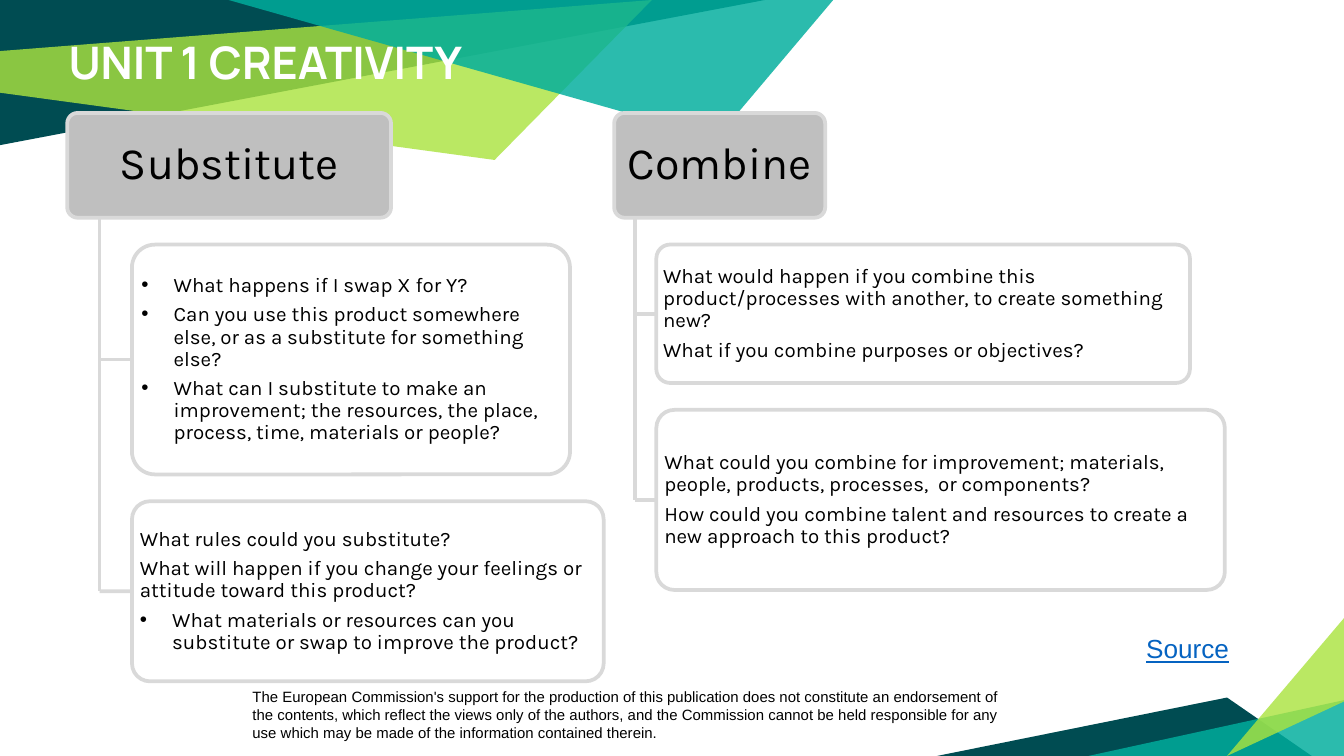
from lxml import etree
from pptx import Presentation
from pptx.dml.color import RGBColor
from pptx.enum.shapes import MSO_CONNECTOR, MSO_SHAPE
from pptx.enum.text import MSO_ANCHOR, MSO_AUTO_SIZE, PP_ALIGN
from pptx.oxml.ns import qn
from pptx.util import Inches, Pt

ROUND = MSO_SHAPE.ROUNDED_RECTANGLE
LINE = MSO_CONNECTOR.STRAIGHT
MIDDLE, TOP = MSO_ANCHOR.MIDDLE, MSO_ANCHOR.TOP
LEFT, CENTER = PP_ALIGN.LEFT, PP_ALIGN.CENTER
FIXED = MSO_AUTO_SIZE.NONE

COLS, ROWS = 100, 56.25
HEAD_TOP, HEAD_H, GAP = 8.4, 7.8, 2
DARK, LIME, TEAL = "004C52", "ABE33F", "00AE9D"
GREY, EDGE, WHITE, BLACK, BLUE = "BFBFBF", "D9D9D9", "FFFFFF", "000000", "0563C1"
MARK = "• "

ART = [
    (DARK, 100, [(0, 0), (0, 10.8), (56.9, 0)]),
    (LIME, 81, [(0, 3.8), (0, 6.9), (36.8, 11.9), (48.5, 0)]),
    (DARK, 100, [(69.7, ROWS), (97.6, ROWS), (91.3, 51.9)]),
    (TEAL, 83, [(COLS, 52.1), (COLS, ROWS), (81, ROWS)]),
    (LIME, 81, [(COLS, 52.2), (COLS, 46), (91.3, ROWS)]),
    (TEAL, 83, [(17, 0), (53.3, 10.3), (62, 0)]),
]

TREES = [
    ("Substitute", 5, 24.1, [
        (32.6, 17.1, [
            "• What happens if I swap X for Y?",
            "• Can you use this product somewhere else, or as a substitute for something else?",
            "• What can I substitute to make an improvement; the resources, the place, "
            "process, time, materials or people?",
        ]),
        (35.1, 13.4, [
            "What rules could you substitute?",
            "What will happen if you change your feelings or attitude toward this product?",
            "• What materials or resources can you substitute or swap to improve the product?",
        ]),
    ]),
    ("Combine", 45.7, 15.7, [
        (39.7, 10.3, [
            "What would happen if you combine this product/processes with another, "
            "to create something new?",
            "What if you combine purposes or objectives?",
        ]),
        (42.3, 13.4, [
            "What could you combine for improvement; materials, people, products, "
            "processes,  or components?",
            "How could you combine talent and resources to create a new approach to this product?",
        ]),
    ]),
]

NOTICE = (
    "The European Commission's support for the production of this publication does not "
    "constitute an endorsement of the contents, which reflect the views only of the authors, "
    "and the Commission cannot be held responsible for any use which may be made of the "
    "information contained therein."
)


def grid(*cells):
    return [Inches(cell / 10) for cell in cells]


def rgb(code):
    return RGBColor.from_string(code)


def paint(shape, code, alpha=100):
    shape.shadow.inherit = False
    shape.fill.solid()
    shape.fill.fore_color.rgb = rgb(code)
    if alpha < 100:
        tone = shape.fill._xPr.find(qn("a:solidFill"))[0]
        etree.SubElement(tone, qn("a:alpha"), val=str(alpha * 1000))


def style(para, font, size, code, bold=None, under=None):
    for run in para.runs:
        run.font.name = font
        run.font.size = Pt(size)
        run.font.color.rgb = rgb(code)
        run.font.bold = bold
        run.font.underline = under


def bullet(para):
    props = para._p.get_or_add_pPr()
    props.set("marL", str(Inches(0.24)))
    props.set("indent", str(-Inches(0.24)))
    etree.SubElement(props, qn("a:buFont"), typeface="Arial")
    etree.SubElement(props, qn("a:buChar"), char="•")


def facet(slide, code, alpha, points):
    spots = [grid(*point) for point in points]
    pen = slide.shapes.build_freeform(*spots[0], scale=1.0)
    pen.add_line_segments(spots[1:], close=True)
    shape = pen.convert_to_shape()
    paint(shape, code, alpha)
    shape.line.fill.background()


def card(slide, place, lines, size, code, alpha, align, pad):
    shape = slide.shapes.add_shape(ROUND, *grid(*place))
    shape.adjustments[0] = 0.1
    paint(shape, code, alpha)
    shape.line.color.rgb = rgb(EDGE)
    shape.line.width = Pt(2)
    frame = shape.text_frame
    frame.word_wrap = True
    frame.vertical_anchor = MIDDLE
    frame.margin_left = frame.margin_right = Inches(pad)
    frame.margin_top = frame.margin_bottom = Inches(0.02)
    frame.text = "\n".join(line.removeprefix(MARK) for line in lines)
    for para, line in zip(frame.paragraphs, lines):
        if line.startswith(MARK):
            bullet(para)
        para.alignment = align
        para.line_spacing = 0.9
        para.space_after = Pt(size * 0.35)
        style(para, "Karla", size, BLACK)
    return shape


def link(slide, start, end):
    wire = slide.shapes.add_connector(LINE, *grid(*start, *end))
    wire.line.color.rgb = rgb(EDGE)
    wire.line.width = Pt(2)
    etree.SubElement(wire._element.spPr, qn("a:effectLst"))
    return wire


def tree(slide, name, left, width, boxes):
    card(slide, (left, HEAD_TOP, width, HEAD_H), [name], 24, GREY, 100, CENTER, 0.05)
    trunk, edge = left + width * 0.1, left + width * 0.2
    base = HEAD_TOP + HEAD_H
    top = base + GAP
    for wide, high, lines in boxes:
        mid = top + high / 2
        box = card(slide, (edge, top, wide, high), lines, 11, WHITE, 90, LEFT, 0.02)
        link(slide, (trunk, mid), (edge, mid)).end_connect(box, 1)
        top += high + GAP
    link(slide, (trunk, base), (trunk, mid))


def label(slide, place, text, size, code, under=None):
    frame = slide.shapes.add_textbox(*grid(*place)).text_frame
    frame.word_wrap = True
    frame.vertical_anchor = TOP
    frame.text = text
    style(frame.paragraphs[0], "Arial", size, code, under=under)


def head(slide, text):
    title = slide.shapes.title
    title.element.getparent().append(title.element)
    title.left, title.top, title.width, title.height = grid(4.1, 2.1, 32.9, 5)
    frame = title.text_frame
    frame.text = text
    frame.auto_size = FIXED
    frame.word_wrap = False
    frame.vertical_anchor = MIDDLE
    para = frame.paragraphs[0]
    para.alignment = LEFT
    style(para, "Manrope", 24, WHITE, bold=True)


def main():
    deck = Presentation()
    deck.slide_width, deck.slide_height = grid(COLS, ROWS)
    slide = deck.slides.add_slide(deck.slide_layouts[5])
    label(slide, (17.8, 50.7, 57.9, 5), NOTICE, 8, BLACK)
    for part in ART:
        facet(slide, *part)
    head(slide, "UNIT 1 CREATIVITY")
    for part in TREES:
        tree(slide, *part)
    label(slide, (84.3, 46.6, 10.7, 3.4), "Source", 14, BLUE, under=True)
    deck.save("out.pptx")


if __name__ == "__main__":
    main()
